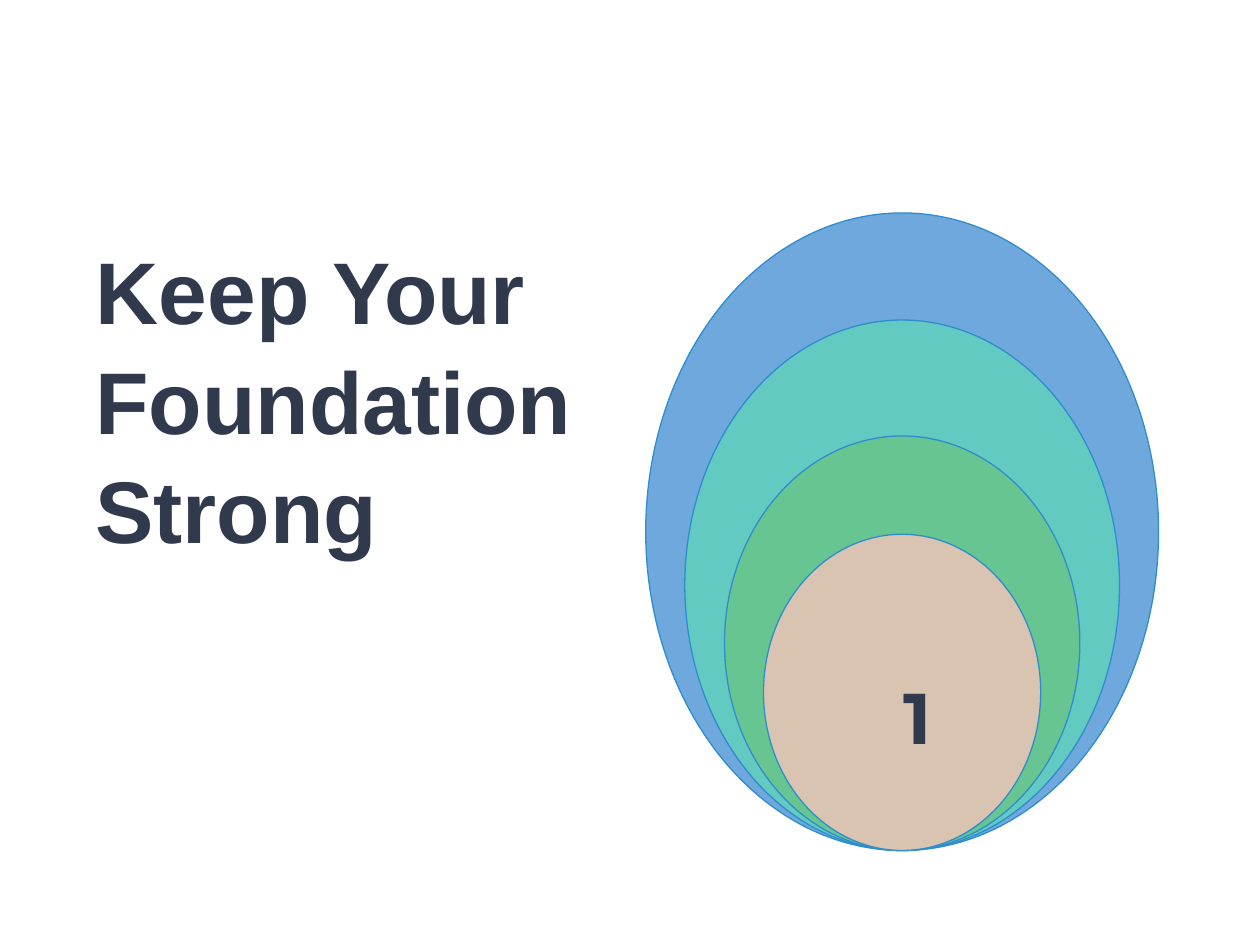
import pptx
import pptx.dml.color
import pptx.enum.shapes
import pptx.enum.text
import pptx.util

Inches, Pt = pptx.util.Inches, pptx.util.Pt
RGBColor = pptx.dml.color.RGBColor
Anchor = pptx.enum.text.MSO_ANCHOR

NAVY = RGBColor(0x31, 0x39, 0x4D)
OUTLINE = RGBColor(0x30, 0x8D, 0xCD)
BLUE = RGBColor(0x6F, 0xA8, 0xDC)
TEAL = RGBColor(0x62, 0xCA, 0xC1)
GREEN = RGBColor(0x67, 0xC5, 0x91)
SAND = RGBColor(0xD9, 0xC4, 0xB1)

# Layers from outermost to innermost: width, height, fill
LAYERS = [
    (4.07, 5.06, BLUE),
    (3.45, 4.21, TEAL),
    (2.82, 3.29, GREEN),
    (2.2, 2.51, SAND),
]
LAYER_CENTER, LAYER_BOTTOM = 7.16, 6.75

# Text, position, vertical inset, anchor, paragraph format, font format
TEXTS = [
    ("Keep Your Foundation Strong", (0.66, 1.87, 4.21, 2.63), 0.05, Anchor.BOTTOM,
     {"space_before": Pt(4), "line_spacing": 1.04},
     {"name": "Arial", "size": Pt(50)}),
    ("1", (7.07, 5.24, 0.31, 0.89), 0.1, Anchor.TOP,
     {}, {"name": "Montserrat", "size": Pt(41)}),
]


def set_all(target, values):
    for name, value in values.items():
        setattr(target, name, value)


def add_layer(page, width, height, color):
    left, top = LAYER_CENTER - width / 2, LAYER_BOTTOM - height
    layer = page.shapes.add_shape(
        pptx.enum.shapes.MSO_SHAPE.OVAL, *map(Inches, (left, top, width, height)))
    layer.shadow.inherit = False
    layer.fill.solid()
    layer.fill.fore_color.rgb = color
    layer.line.color.rgb = OUTLINE
    layer.line.width = Pt(0.75)


def add_text(page, text, place, inset, anchor, paragraph_format, font_format):
    frame = page.shapes.add_textbox(*map(Inches, place)).text_frame
    set_all(frame, {
        "word_wrap": True, "vertical_anchor": anchor,
        "margin_left": Inches(0.1), "margin_right": Inches(0.1),
        "margin_top": Inches(inset), "margin_bottom": Inches(inset),
    })
    para = frame.paragraphs[0]
    set_all(para, paragraph_format)
    span = para.add_run()
    span.text = text
    set_all(span.font, {"bold": True, **font_format})
    span.font.color.rgb = NAVY


def main():
    deck = pptx.Presentation()
    deck.slide_width, deck.slide_height = Inches(10), Inches(7.5)
    page = deck.slides.add_slide(deck.slide_layouts[6])
    for layer in LAYERS:
        add_layer(page, *layer)
    for entry in TEXTS:
        add_text(page, *entry)
    deck.save("out.pptx")


if __name__ == "__main__":
    main()
